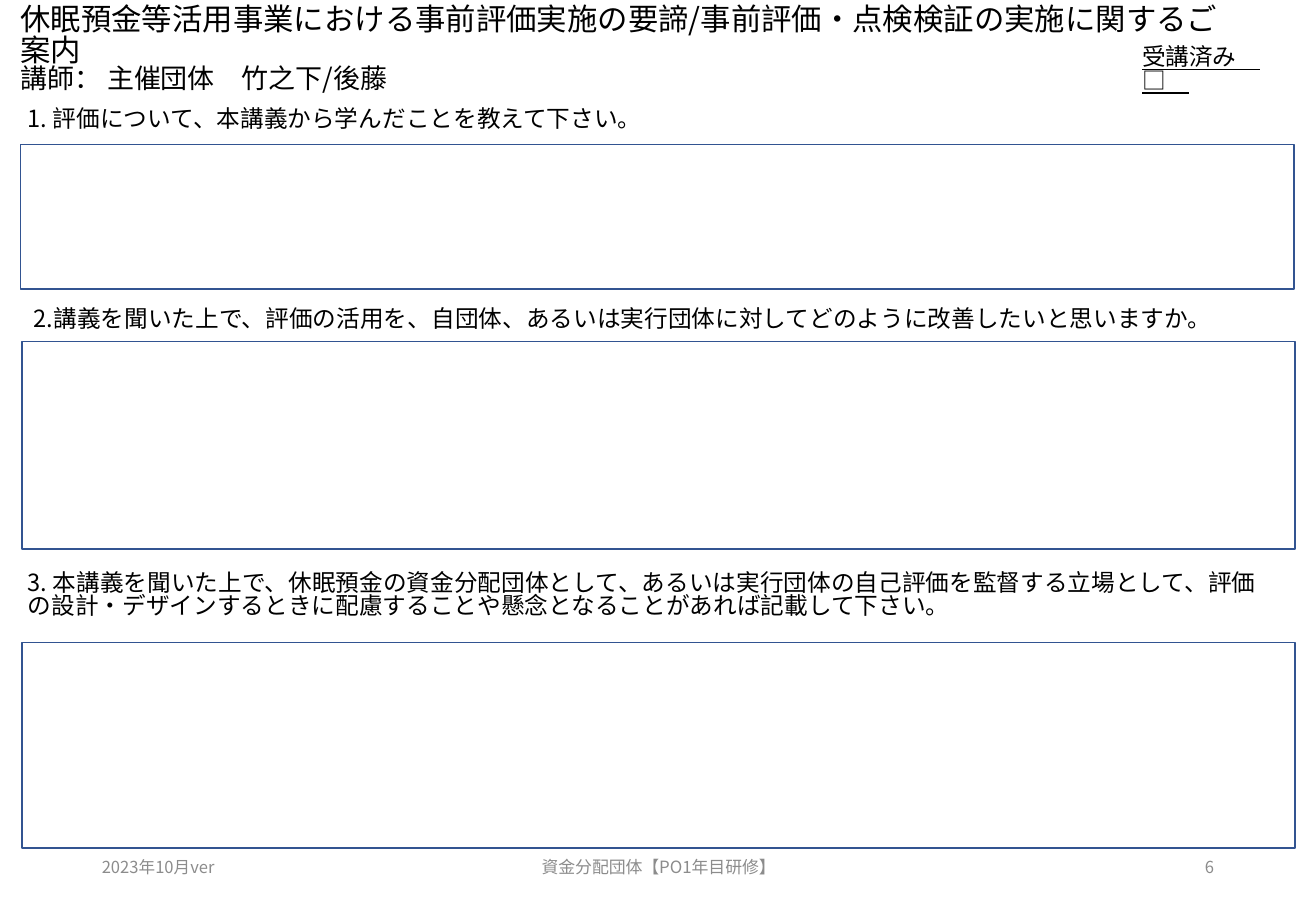
from pptx import Presentation
from pptx.dml.color import RGBColor
from pptx.enum.shapes import MSO_SHAPE
from pptx.enum.text import MSO_ANCHOR, PP_ALIGN
from pptx.oxml.ns import qn
from pptx.util import Inches, Pt
from lxml.etree import SubElement

WIDTH, HEIGHT = Inches(10.83), Inches(7.5)
FONT = "Noto Sans CJK JP"
LINE_SPACING = 0.83
COLORS = {"text": "000000", "footer": "8C8C8C", "box": "FFFFFF", "border": "325491"}

# Places are left, top, width, height in percent of the slide
TITLE_PLACE = (0.65, -1.07, 93.44, 13.2)
STATUS_PLACE = (85.87, 5.47, 14.13, 4.53)
QUESTIONS = [
    ("1. 評価について、本講義から学んだことを教えて下さい。",
     (1.2, 10.93, 95.94, 4.53), (1.57, 15.87, 96.77, 15.87)),
    ("2.講義を聞いた上で、評価の活用を、自団体、あるいは実行団体に対してどのように改善したいと思いますか。",
     (1.66, 32.93, 96.77, 4.53), (1.66, 37.47, 96.77, 22.8)),
    ("3. 本講義を聞いた上で、休眠預金の資金分配団体として、あるいは実行団体の自己評価を監督する立場として、"
     "評価の設計・デザインするときに配慮することや懸念となることがあれば記載して下さい。",
     (1.2, 61.6, 96.77, 7.6), (1.66, 70.53, 96.77, 22.53)),
]
FOOTERS = [
    ("2023年10月ver", 6.83, 22.53, 9.8, PP_ALIGN.LEFT),
    ("資金分配団体【PO1年目研修】", 33.15, 33.8, 10, PP_ALIGN.CENTER),
    ("6", 70.64, 22.53, 9.8, PP_ALIGN.RIGHT),
]


def share(left, top, width, height):
    return [round(total * part / 100) for total, part in
            zip((WIDTH, HEIGHT, WIDTH, HEIGHT), (left, top, width, height))]


def add_text(s, place, lines, color="text", align=PP_ALIGN.LEFT, underline=None):
    """Write (text, size) lines as one paragraph."""
    tf = s.shapes.add_textbox(*share(*place)).text_frame
    tf.word_wrap = True
    tf.vertical_anchor = MSO_ANCHOR.MIDDLE
    p = tf.paragraphs[0]
    p.alignment = align
    p.line_spacing = LINE_SPACING
    p.font.name = FONT
    p.font.color.rgb = RGBColor.from_string(COLORS[color])
    p.font.underline = underline
    if len(lines) == 1:
        p.font.size = Pt(lines[0][1])
    for i, (text, size) in enumerate(lines):
        if i:
            p.add_line_break()
        r = p.add_run()
        r.text = text
        if len(lines) > 1:
            r.font.size = Pt(size)
        # East Asian glyphs take their own typeface
        SubElement(r.font._element, qn("a:ea"), typeface=FONT)


def add_answer_box(s, place):
    sp = s.shapes.add_shape(MSO_SHAPE.RECTANGLE, *share(*place))
    sp.shadow.inherit = False
    sp.fill.solid()
    sp.fill.fore_color.rgb = RGBColor.from_string(COLORS["box"])
    sp.line.color.rgb = RGBColor.from_string(COLORS["border"])
    sp.line.width = Pt(1)


def main():
    prs = Presentation()
    prs.slide_width, prs.slide_height = WIDTH, HEIGHT
    s = prs.slides.add_slide(prs.slide_layouts[6])

    # Heading and attendance mark
    add_text(s, TITLE_PLACE, [
        ("休眠預金等活用事業における事前評価実施の要諦/事前評価・点検検証の実施に関するご案内", 18),
        ("講師： 主催団体　竹之下/後藤", 16),
    ])
    add_text(s, STATUS_PLACE, [("受講済み　□　", 14)], underline=True)

    # Questions with their answer boxes
    for question, text_place, box_place in QUESTIONS:
        add_answer_box(s, box_place)
        add_text(s, text_place, [(question, 14)])

    # Footer
    for text, left, width, size, align in FOOTERS:
        add_text(s, (left, 92.67, width, 5.33), [(text, size)], "footer", align)

    prs.save("out.pptx")


if __name__ == "__main__":
    main()
